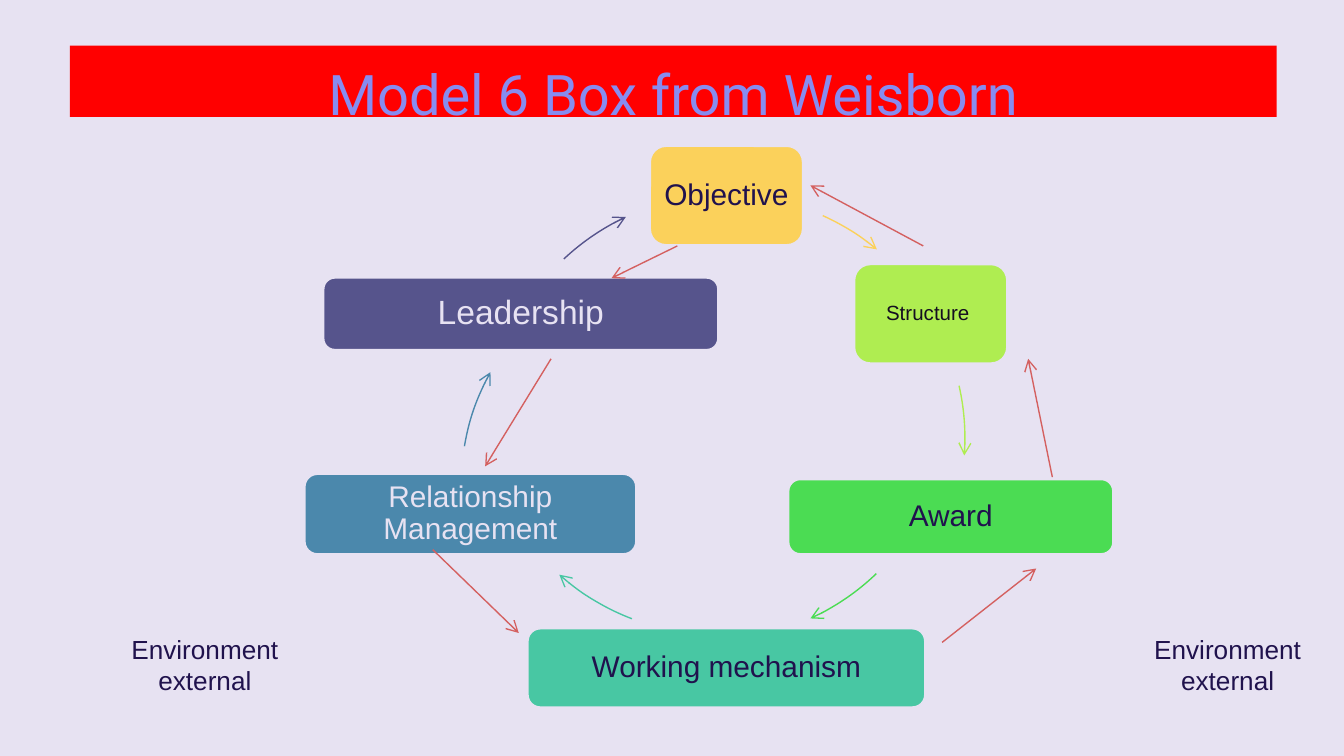
from dataclasses import dataclass
from lxml.etree import SubElement
from pptx import Presentation
from pptx.dml.color import RGBColor
from pptx.enum.shapes import MSO_CONNECTOR, MSO_SHAPE
from pptx.enum.text import MSO_ANCHOR, PP_ALIGN
from pptx.oxml.ns import qn
from pptx.util import Inches, Pt


@dataclass
class Theme:
    back: str = "E7E2F2"
    dark: str = "20124D"
    ink: str = "140E20"
    banner: str = "FF0000"
    title: str = "878CF0"
    link: str = "D46060"
    gold: str = "FBD15B"
    lime: str = "AFED51"
    green: str = "4BDC53"
    teal: str = "48C7A3"
    blue: str = "4B88AC"
    violet: str = "56548C"
    body: str = "Arial"
    head: str = "Roboto"
    huge: int = 30
    large: int = 18
    mid: int = 16
    note: int = 14
    small: int = 11
    thin: float = 0.75
    edge: float = 2
    ring: float = 35.2


def rgb(code):
    return RGBColor.from_string(code)


def apply(item, form):
    for name, value in form.items():
        setattr(item, name, value)


class Board:
    cell = 0.1

    def __init__(self, deck, theme):
        self.theme = theme
        self.slide = deck.slides.add_slide(deck.slide_layouts[6])
        fill = self.slide.background.fill
        fill.solid()
        fill.fore_color.rgb = rgb(theme.back)

    def grid(self, *units):
        return [Inches(unit * self.cell) for unit in units]

    def shape(self, kind, area, fill=None):
        item = self.slide.shapes.add_shape(kind, *self.grid(*area))
        item.shadow.inherit = False
        item.line.fill.background()
        if fill:
            item.fill.solid()
            item.fill.fore_color.rgb = rgb(fill)
        else:
            item.fill.background()
        return item

    def stroke(self, line, color, width):
        line.color.rgb = rgb(color)
        line.width = Pt(width)

    def tip(self, line, color):
        self.stroke(line, color, self.theme.thin)
        SubElement(line._get_or_add_ln(), qn("a:tailEnd"), type="arrow")

    def text(self, item, words, size, color, face=None, pad=1,
             anchor=MSO_ANCHOR.MIDDLE, space=1.0):
        frame = item.text_frame
        inset = self.grid(pad)[0]
        sides = ("left", "top", "right", "bottom")
        form = {f"margin_{side}": inset for side in sides}
        apply(frame, form | {"word_wrap": True, "vertical_anchor": anchor})
        para = frame.paragraphs[0]
        apply(para, {"alignment": PP_ALIGN.CENTER, "line_spacing": space})
        run = para.add_run()
        run.text = words
        apply(run.font, {"name": face or self.theme.body, "size": Pt(size)})
        run.font.color.rgb = rgb(color)

    def title(self, words, area):
        look = self.theme
        item = self.shape(MSO_SHAPE.RECTANGLE, area, look.banner)
        self.text(item, words, look.huge, look.title, look.head,
                  anchor=MSO_ANCHOR.TOP)

    def box(self, words, area, fill, size, color):
        look = self.theme
        item = self.shape(MSO_SHAPE.ROUNDED_RECTANGLE, area, fill)
        self.stroke(item.line, look.back, look.edge)
        self.text(item, words, size, color, pad=0.7, space=0.9)

    def arc(self, left, top, start, end, color):
        ring = self.theme.ring
        item = self.shape(MSO_SHAPE.ARC, (left, top, ring, ring))
        for index, angle in enumerate((start, end)):
            item.adjustments[index] = angle * 0.6
        self.tip(item.line, color)

    def arrow(self, *ends):
        item = self.slide.shapes.add_connector(
            MSO_CONNECTOR.STRAIGHT, *self.grid(*ends))
        self.tip(item.line, self.theme.link)
        SubElement(item._element.spPr, qn("a:effectLst"))

    def note(self, words, area):
        item = self.shape(MSO_SHAPE.OVAL, area)
        self.text(item, words, self.theme.note, self.theme.dark)


def main():
    deck = Presentation()
    wide = Inches(10)
    apply(deck, {"slide_width": wide, "slide_height": wide * 9 // 16})
    look = Theme()
    board = Board(deck, look)
    board.title("Model 6 Box from Weisborn", (5.2, 3.4, 89.8, 5.3))

    steps = [
        ("Objective", (48.3, 10.8, 11.5, 7.5), look.gold, look.mid,
         look.dark, (36.4, 14.5, 294.2, 309.7)),
        ("Structure ", (63.5, 19.6, 11.5, 7.5), look.lime, look.small,
         look.ink, (36.6, 15, 347.2, 4.2)),
        ("Award", (58.6, 35.6, 24.3, 5.7), look.green, look.mid,
         look.dark, (35.4, 12.4, 46.1, 65.5)),
        ("Working mechanism", (39.2, 46.7, 29.7, 6), look.teal, look.mid,
         look.dark, (35.7, 12, 110.9, 131.6)),
        ("Relationship Management", (22.6, 35.2, 24.8, 6.1), look.blue,
         look.mid, look.back, (34.3, 18.6, 189.8, 208.9)),
        ("Leadership", (24, 20.6, 29.5, 5.5), look.violet, look.large,
         look.back, (36.4, 14.5, 226.8, 245)),
    ]
    for words, area, fill, size, color, sweep in steps:
        board.box(words, area, fill, size, color)
        board.arc(*sweep, fill)

    links = [
        (50.4, 18.3, 45.5, 20.7),
        (41, 26.7, 36.1, 34.7),
        (78.3, 35.5, 76.5, 26.7),
        (68.7, 18.3, 60.3, 13.8),
        (70.1, 47.8, 77.1, 42.3),
        (32.2, 40.9, 38.6, 47.1),
    ]
    for ends in links:
        board.arrow(*ends)

    for left in (6, 82.1):
        board.note("Environment external", (left, 45.1, 18.5, 8.7))
    deck.save("out.pptx")


if __name__ == "__main__":
    main()
